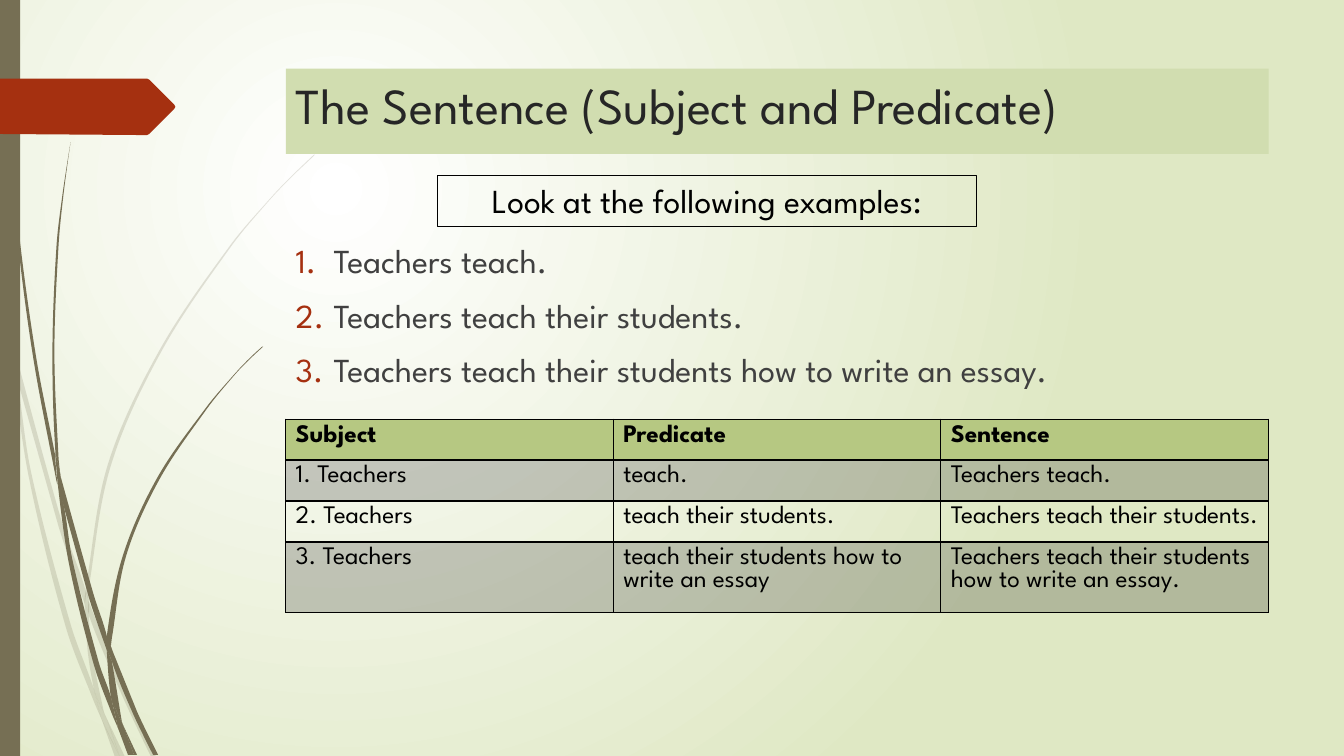
from dataclasses import dataclass
from math import hypot
from typing import Any

from lxml import etree
from pptx import Presentation
from pptx.dml.color import RGBColor
from pptx.enum.shapes import MSO_SHAPE
from pptx.enum.text import MSO_ANCHOR, MSO_AUTO_SIZE, PP_ALIGN
from pptx.oxml.ns import qn
from pptx.util import Pt

RECTANGLE = MSO_SHAPE.RECTANGLE
LEFT, CENTER = PP_ALIGN.LEFT, PP_ALIGN.CENTER
TOP, NO_AUTOFIT = MSO_ANCHOR.TOP, MSO_AUTO_SIZE.NONE
FONT = "League Spartan"
COLORS = {
    "white": "FFFFFF", "mist": "DFE8C4", "bark": "766F54", "rust": "A53010",
    "title_fill": "D1DDB0", "header_fill": "B6C882",
    "title": "262626", "body": "404040", "black": "000000",
}
UNIT = Pt(0.72)  # outline coordinates are hundredths of an inch
Point = tuple[float, float]


@dataclass
class Outline:
    points: list[Point]
    color_name: str = "bark"
    opacity: int = 100
    curved: bool = True


@dataclass
class Box:
    left: float
    top: float
    width: float
    height: float

    def lengths(self) -> list[int]:
        return [Pt(value) for value in (self.left, self.top, self.width, self.height)]


PALE_GRASS = [
    [(11, 350), (9, 322), (0, 282), (0, 299), (10, 344)],
    [(58, 522), (84, 599), (85, 586), (62, 520), (14, 345), (17, 376)],
    [(92, 607), (88, 596), (88, 610), (123, 694), (150, 751), (155, 751), (127, 692)],
    [(119, 751), (124, 751), (105, 711)],
    [(93, 683), (70, 619), (31, 469), (17, 376), (11, 350), (28, 470), (65, 621), (92, 693),
     (101, 714), (99, 707)],
    [(84, 599), (87, 646), (93, 683), (96, 692), (105, 711), (103, 706), (91, 646), (88, 610), (88, 608)],
    [(88, 584), (110, 462), (160, 349), (229, 245), (268, 198), (290, 175), (312, 154), (312, 153),
     (289, 175), (268, 197), (228, 244), (158, 348), (107, 461), (85, 584), (85, 586), (88, 596)],
    [(101, 714), (114, 751), (119, 751)],
    [(88, 608), (88, 596), (85, 586), (84, 599)],
    [(96, 692), (93, 683), (99, 707), (101, 714), (119, 751), (105, 711)],
]
DARK_GRASS = [
    [(7, 110), (17, 233), (33, 355), (56, 477), (57, 481), (55, 457), (55, 453), (36, 355), (19, 232),
     (8, 109), (5, 48), (4, 0), (3, 0), (4, 48)],
    [(88, 592), (106, 645), (106, 631), (93, 590), (60, 472), (64, 505)],
    [(113, 649), (110, 641), (111, 656), (132, 708), (152, 749), (157, 749), (136, 706)],
    [(110, 691), (98, 657), (72, 556), (64, 505), (57, 477), (68, 557), (93, 659), (111, 708),
     (117, 722), (116, 717)],
    [(60, 472), (58, 453), (54, 349), (58, 245), (63, 193), (70, 141), (62, 193), (56, 245),
     (52, 349), (55, 449)],
    [(133, 749), (136, 749), (122, 719)],
    [(57, 477), (64, 505), (60, 472), (55, 449), (55, 453)],
    [(111, 633), (125, 552), (158, 476), (205, 406), (231, 374), (245, 359), (261, 344), (260, 344),
     (245, 358), (231, 373), (204, 405), (156, 474), (122, 551), (106, 631), (110, 641)],
    [(117, 722), (127, 749), (131, 749)],
    [(106, 645), (110, 691), (116, 706), (122, 719), (121, 716), (111, 656), (109, 651)],
    [(106, 645), (109, 651), (111, 656), (110, 641), (106, 631)],
    [(116, 706), (110, 691), (116, 717), (117, 722), (130, 749), (133, 749), (122, 719)],
]
ARROW_TAG = Outline([(173, 108), (148, 133), (146, 134), (136, 134), (0, 133), (0, 78), (146, 78),
                     (148, 79), (173, 104), (174, 106)], "rust", curved=False)
TITLE_BOX = Box(204.2, 49, 702, 61)
CALLOUT_BOX = Box(312.5, 125.3, 385, 36.4)
BODY_BOX = Box(204, 168, 702, 125)
TABLE_BOX = Box(204, 299.5, 702, 118)
BAR_BOX = Box(0, 0, 14.4, 540)
EXAMPLES = [
    "Teachers teach.",
    "Teachers teach their students.",
    "Teachers teach their students how to write an essay.",
]
TABLE_ROWS = [
    ["Subject", "Predicate", "Sentence"],
    ["1. Teachers", "teach.", EXAMPLES[0]],
    ["2. Teachers", "teach their students.", EXAMPLES[1]],
    ["3. Teachers", "teach their students how to write an essay", EXAMPLES[2]],
]


def color(name: str) -> RGBColor:
    return RGBColor.from_string(COLORS[name])


def set_all(target: Any, values: dict[str, Any]) -> None:
    for name, value in values.items():
        setattr(target, name, value)


def write(paragraph: Any, text: str, size: float, color_name: str, bold: bool = False) -> None:
    run = paragraph.add_run()
    run.text = text
    set_all(run.font, {"name": FONT, "size": Pt(size), "bold": bold})
    run.font.color.rgb = color(color_name)


def fill_solid(fill: Any, color_name: str, parent: Any = None, opacity: int = 100) -> None:
    fill.solid()
    fill.fore_color.rgb = color(color_name)
    if opacity < 100:
        solid = parent.find(qn("a:solidFill"))
        etree.SubElement(solid[0], qn("a:alpha"), val=str(opacity * 1000))


def finish_shape(shape: Any, color_name: str, opacity: int = 100) -> None:
    shape.shadow.inherit = False
    shape.line.fill.background()
    fill_solid(shape.fill, color_name, shape.element.spPr, opacity)


def tangent(before: Point, here: Point, after: Point) -> Point:
    """Unit direction through a point, or zero at a sharp corner."""
    ax, ay, bx, by = here[0] - before[0], here[1] - before[1], after[0] - here[0], after[1] - here[1]
    if ax * bx + ay * by < 0.6 * hypot(ax, ay) * hypot(bx, by):
        return 0, 0
    length = hypot(ax + bx, ay + by)
    return (ax + bx) / length, (ay + by) / length


def curve_segments(shape: Any, points: list[Point]) -> None:
    """Turn each straight side into a Bezier curve through the same points."""
    left, top = (min(values) for values in zip(*points))
    count = len(points)
    tangents = [tangent(points[i - 1], points[i], points[(i + 1) % count]) for i in range(count)]
    for i, segment in enumerate(list(shape.element.iter(qn("a:lnTo")))):
        j = (i + 1) % count
        (x0, y0), (x1, y1) = points[i], points[j]
        reach = hypot(x1 - x0, y1 - y0) / 3
        controls = [(x0 + reach * tangents[i][0], y0 + reach * tangents[i][1]),
                    (x1 - reach * tangents[j][0], y1 - reach * tangents[j][1])]
        segment.tag = qn("a:cubicBezTo")
        for position, (x, y) in enumerate(controls):
            values = {"x": str(round((x - left) * UNIT)), "y": str(round((y - top) * UNIT))}
            segment.insert(position, etree.Element(qn("a:pt"), values))


def add_outline(slide: Any, outline: Outline) -> None:
    vertices = [(x * UNIT, y * UNIT) for x, y in outline.points]
    builder = slide.shapes.build_freeform(*vertices[0], scale=1.0)
    builder.add_line_segments(vertices[1:], close=True)
    shape = builder.convert_to_shape()
    if outline.curved:
        curve_segments(shape, outline.points)
    finish_shape(shape, outline.color_name, outline.opacity)


def set_background(slide: Any) -> None:
    fill = slide.background.fill
    fill.gradient()
    for stop, name, position in zip(fill.gradient_stops, ("white", "mist"), (0, 1)):
        stop.color.rgb = color(name)
        stop.position = position
    gradient = slide.element.find(".//" + qn("a:gradFill"))
    gradient.remove(gradient.find(qn("a:lin")))
    radial = etree.SubElement(gradient, qn("a:path"), path="circle")
    etree.SubElement(radial, qn("a:fillToRect"), l="50000", t="50000", r="100000", b="100000")


def number_paragraph(paragraph: Any) -> None:
    set_all(paragraph, {"space_before": Pt(10), "alignment": LEFT})
    properties = paragraph._p.get_or_add_pPr()
    properties.set("marL", str(Pt(27)))
    properties.set("indent", str(Pt(-27)))
    bullet_color = etree.SubElement(properties, qn("a:buClr"))
    etree.SubElement(bullet_color, qn("a:srgbClr"), val=COLORS["rust"])
    etree.SubElement(properties, qn("a:buAutoNum"), type="arabicPeriod")


def add_borders(cell: Any, bottom_width: float) -> None:
    for position, side in enumerate("LRTB"):
        line = etree.Element(qn(f"a:ln{side}"), w=str(Pt(bottom_width if side == "B" else 1)))
        solid = etree.SubElement(line, qn("a:solidFill"))
        etree.SubElement(solid, qn("a:srgbClr"), val=COLORS["black"])
        cell._tc.get_or_add_tcPr().insert(position, line)


def add_sentence_table(slide: Any) -> None:
    table = slide.shapes.add_table(len(TABLE_ROWS), len(TABLE_ROWS[0]), *TABLE_BOX.lengths()).table
    table.horz_banding = False
    for row_index, texts in enumerate(TABLE_ROWS):
        header = row_index == 0
        table.rows[row_index].height = Pt(29.2)
        for cell, text in zip(table.rows[row_index].cells, texts):
            write(cell.text_frame.paragraphs[0], text, 18, "black", bold=header)
            if header:
                fill_solid(cell.fill, "header_fill")
            elif row_index % 2:
                fill_solid(cell.fill, "black", cell._tc.tcPr, 20)
            else:
                cell.fill.background()
            add_borders(cell, 1.5 if header else 1)


def main() -> None:
    presentation = Presentation()
    set_all(presentation, {"slide_width": Pt(960), "slide_height": Pt(540)})
    slide = presentation.slides.add_slide(presentation.slide_layouts[1])
    set_background(slide)
    # Grass, side bar and arrow tag
    for pieces, opacity in ((PALE_GRASS, 20), (DARK_GRASS, 100)):
        for points in pieces:
            add_outline(slide, Outline(points, opacity=opacity))
    finish_shape(slide.shapes.add_shape(RECTANGLE, *BAR_BOX.lengths()), "bark")
    add_outline(slide, ARROW_TAG)
    # Title and numbered examples
    title, body = slide.placeholders
    for placeholder, box in ((title, TITLE_BOX), (body, BODY_BOX)):
        set_all(placeholder, dict(zip(("left", "top", "width", "height"), box.lengths())))
        set_all(placeholder.text_frame, {"vertical_anchor": TOP, "auto_size": NO_AUTOFIT, "word_wrap": True})
    fill_solid(title.fill, "title_fill")
    title.text_frame.paragraphs[0].alignment = LEFT
    write(title.text_frame.paragraphs[0], "The Sentence (Subject and Predicate)", 36, "title")
    for index, example in enumerate(EXAMPLES):
        paragraph = body.text_frame.add_paragraph() if index else body.text_frame.paragraphs[0]
        number_paragraph(paragraph)
        write(paragraph, example, 24, "body")
    # Framed prompt
    callout = slide.shapes.add_textbox(*CALLOUT_BOX.lengths())
    callout.text_frame.word_wrap = False
    callout.line.color.rgb = color("black")
    callout.line.width = Pt(0.75)
    callout.text_frame.paragraphs[0].alignment = CENTER
    write(callout.text_frame.paragraphs[0], "Look at the following examples:", 24, "black")
    # Subject, predicate and sentence table
    add_sentence_table(slide)
    presentation.save("out.pptx")


if __name__ == "__main__":
    main()
